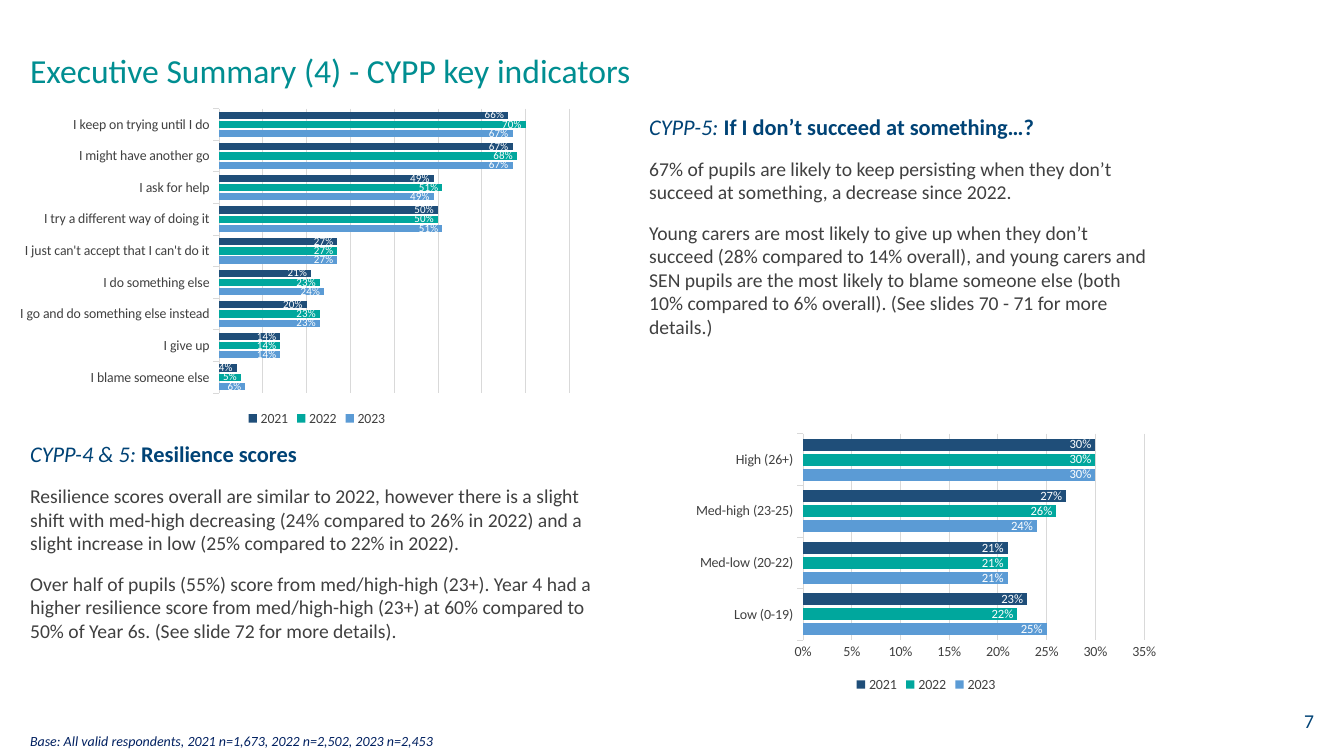
from dataclasses import dataclass

from pptx import Presentation
from pptx.chart.data import CategoryChartData
from pptx.dml.color import RGBColor
from pptx.enum.chart import XL_CHART_TYPE, XL_LABEL_POSITION, XL_LEGEND_POSITION, XL_TICK_MARK
from pptx.enum.text import MSO_ANCHOR, PP_ALIGN
from pptx.oxml import parse_xml
from pptx.oxml.ns import nsdecls, qn
from pptx.util import Inches, Pt

BAR_CLUSTERED = XL_CHART_TYPE.BAR_CLUSTERED
INSIDE_END = XL_LABEL_POSITION.INSIDE_END
LEGEND_BOTTOM = XL_LEGEND_POSITION.BOTTOM
TICK_NONE, TICK_OUTSIDE = XL_TICK_MARK.NONE, XL_TICK_MARK.OUTSIDE
TOP, MIDDLE, BOTTOM = MSO_ANCHOR.TOP, MSO_ANCHOR.MIDDLE, MSO_ANCHOR.BOTTOM
LEFT, RIGHT = PP_ALIGN.LEFT, PP_ALIGN.RIGHT


@dataclass(frozen=True)
class Theme:
    font: str = "Calibri"
    title: RGBColor = RGBColor(0x00, 0x8E, 0x91)
    heading: RGBColor = RGBColor(0x00, 0x43, 0x76)
    body: RGBColor = RGBColor(0x40, 0x40, 0x40)
    note: RGBColor = RGBColor(0x00, 0x20, 0x60)
    grid: RGBColor = RGBColor(0xD9, 0xD9, 0xD9)
    label: RGBColor = RGBColor(0xFF, 0xFF, 0xFF)
    years: tuple = (
        RGBColor(0x5B, 0x9B, 0xD5),
        RGBColor(0x00, 0xA7, 0x9D),
        RGBColor(0x1F, 0x4E, 0x79),
    )
    title_size: Pt = Pt(24)
    heading_size: Pt = Pt(16)
    body_size: Pt = Pt(14)
    small_size: Pt = Pt(10)


theme = Theme()


def style_font(font, size, color, bold=False, italic=False):
    font.name, font.size = theme.font, size
    font.color.rgb = color
    font.bold, font.italic = bold, italic


def add_text_box(box, anchor=TOP):
    shape = slide.shapes.add_textbox(*map(Inches, box))
    shape.text_frame.word_wrap = True
    shape.text_frame.vertical_anchor = anchor
    return shape.text_frame


presentation = Presentation()
presentation.slide_width = Inches(13.33)
presentation.slide_height = Inches(7.5)
slide = presentation.slides.add_slide(presentation.slide_layouts[6])

# Title, base note and page number
single_lines = [
    ("Executive Summary (4) - CYPP key indicators", (0.2, 0.2, 10.83, 0.98),
     MIDDLE, LEFT, theme.title_size, theme.title, False),
    ("Base: All valid respondents, 2021 n=1,673, 2022 n=2,502, 2023 n=2,453",
     (0.2, 7.21, 10.46, 0.27), BOTTOM, LEFT, theme.small_size, theme.note, True),
    ("7", (12.54, 6.95, 0.59, 0.4), MIDDLE, RIGHT, theme.body_size, theme.heading, False),
]
for text, box, anchor, alignment, size, color, italic in single_lines:
    paragraph = add_text_box(box, anchor).paragraphs[0]
    paragraph.text = text
    paragraph.alignment = alignment
    style_font(paragraph.runs[0].font, size, color, italic=italic)

# Commentary blocks
commentaries = [
    ((6.34, 1.07, 5.22, 2.39), "CYPP-5: ", "If I don’t succeed at something…?", [
        "67% of pupils are likely to keep persisting when they don’t succeed at "
        "something, a decrease since 2022.",
        "Young carers are most likely to give up when they don’t succeed (28% compared "
        "to 14% overall), and young carers and SEN pupils are the most likely to blame "
        "someone else (both 10% compared to 6% overall). (See slides 70 - 71 for more "
        "details.)",
    ]),
    ((0.2, 4.32, 5.79, 2.08), "CYPP-4 & 5: ", "Resilience scores", [
        "Resilience scores overall are similar to 2022, however there is a slight shift "
        "with med-high decreasing (24% compared to 26% in 2022) and a slight increase "
        "in low (25% compared to 22% in 2022).",
        "Over half of pupils (55%) score from med/high-high (23+). Year 4 had a higher "
        "resilience score from med/high-high (23+) at 60% compared to 50% of Year 6s. "
        "(See slide 72 for more details).",
    ]),
]
for box, indicator, heading, body in commentaries:
    text_frame = add_text_box(box)
    paragraph = text_frame.paragraphs[0]
    for text, is_heading in ((indicator, False), (heading, True)):
        run = paragraph.add_run()
        run.text = text
        style_font(run.font, theme.heading_size, theme.heading,
                   bold=is_heading, italic=not is_heading)
    for text in body:
        paragraph = text_frame.add_paragraph()
        paragraph.text = text
        style_font(paragraph.runs[0].font, theme.body_size, theme.body)
    for paragraph in text_frame.paragraphs:
        paragraph.space_before = paragraph.space_after = Pt(6)

# Chart data, each row holding 2023, 2022 and 2021
persistence = {
    "I blame someone else": (0.06, 0.05, 0.04),
    "I give up": (0.14, 0.14, 0.14),
    "I go and do something else instead": (0.23, 0.23, 0.20),
    "I do something else": (0.24, 0.23, 0.21),
    "I just can't accept that I can't do it": (0.27, 0.27, 0.27),
    "I try a different way of doing it": (0.51, 0.50, 0.50),
    "I ask for help": (0.49, 0.51, 0.49),
    "I might have another go": (0.67, 0.68, 0.67),
    "I keep on trying until I do": (0.67, 0.70, 0.66),
}
resilience = {
    "Low (0-19)": (0.25, 0.22, 0.23),
    "Med-low (20-22)": (0.21, 0.21, 0.21),
    "Med-high (23-25)": (0.24, 0.26, 0.27),
    "High (26+)": (0.30, 0.30, 0.30),
}

# Charts: rows, box, axis maximum, axis step, axis shown, label size
charts = [
    (persistence, (0.2, 0.91, 5.79, 3.36), 0.8, 0.1, False, Pt(8)),
    (resilience, (6.81, 4.25, 4.75, 2.66), 0.35, 0.05, True, Pt(9)),
]
for rows, box, maximum, step, axis_shown, label_size in charts:
    chart_data = CategoryChartData(number_format="0%")
    chart_data.categories = list(rows)
    for year, values in zip(("2023", "2022", "2021"), zip(*rows.values())):
        chart_data.add_series(year, values)
    chart = slide.shapes.add_chart(BAR_CLUSTERED, *map(Inches, box), chart_data).chart
    chart.has_title = False
    style_font(chart.font, theme.small_size, theme.body)
    chart.has_legend = True
    chart.legend.position = LEGEND_BOTTOM
    chart.legend.include_in_layout = False
    style_font(chart.legend.font, theme.small_size, theme.body)

    # Bars and their labels
    plot = chart.plots[0]
    plot.gap_width, plot.overlap = 80, -25
    plot.vary_by_categories = False
    for series, color in zip(plot.series, theme.years):
        series.format.fill.solid()
        series.format.fill.fore_color.rgb = color
        labels = series.data_labels
        labels.show_value = True
        labels.position = INSIDE_END
        labels.number_format, labels.number_format_is_linked = "0%", False
        style_font(labels.font, label_size, theme.label)

    # Axes and gridlines
    category_axis, value_axis = chart.category_axis, chart.value_axis
    category_axis.major_tick_mark = TICK_OUTSIDE
    value_axis.major_tick_mark = TICK_NONE
    value_axis.minimum_scale, value_axis.maximum_scale = 0, maximum
    value_axis.major_unit = step
    value_axis.has_major_gridlines = True
    value_axis.tick_labels.number_format = "0%"
    value_axis.tick_labels.number_format_is_linked = False
    value_axis.format.line.fill.background()
    value_axis.visible = axis_shown
    for line in (category_axis.format.line, value_axis.major_gridlines.format.line):
        line.color.rgb = theme.grid
        line.width = Pt(0.75)

    # Fixed plot area for the chart with long category names
    if not axis_shown:
        plot_area = chart.element.find(".//" + qn("c:plotArea"))
        for layout in plot_area.findall(qn("c:layout")):
            plot_area.remove(layout)
        plot_area.insert(0, parse_xml(
            f'<c:layout {nsdecls("c")}><c:manualLayout><c:layoutTarget val="inner"/>'
            '<c:xMode val="edge"/><c:yMode val="edge"/><c:x val="0.33"/><c:y val="0.05"/>'
            '<c:w val="0.61"/><c:h val="0.84"/></c:manualLayout></c:layout>'))

presentation.save("out.pptx")
